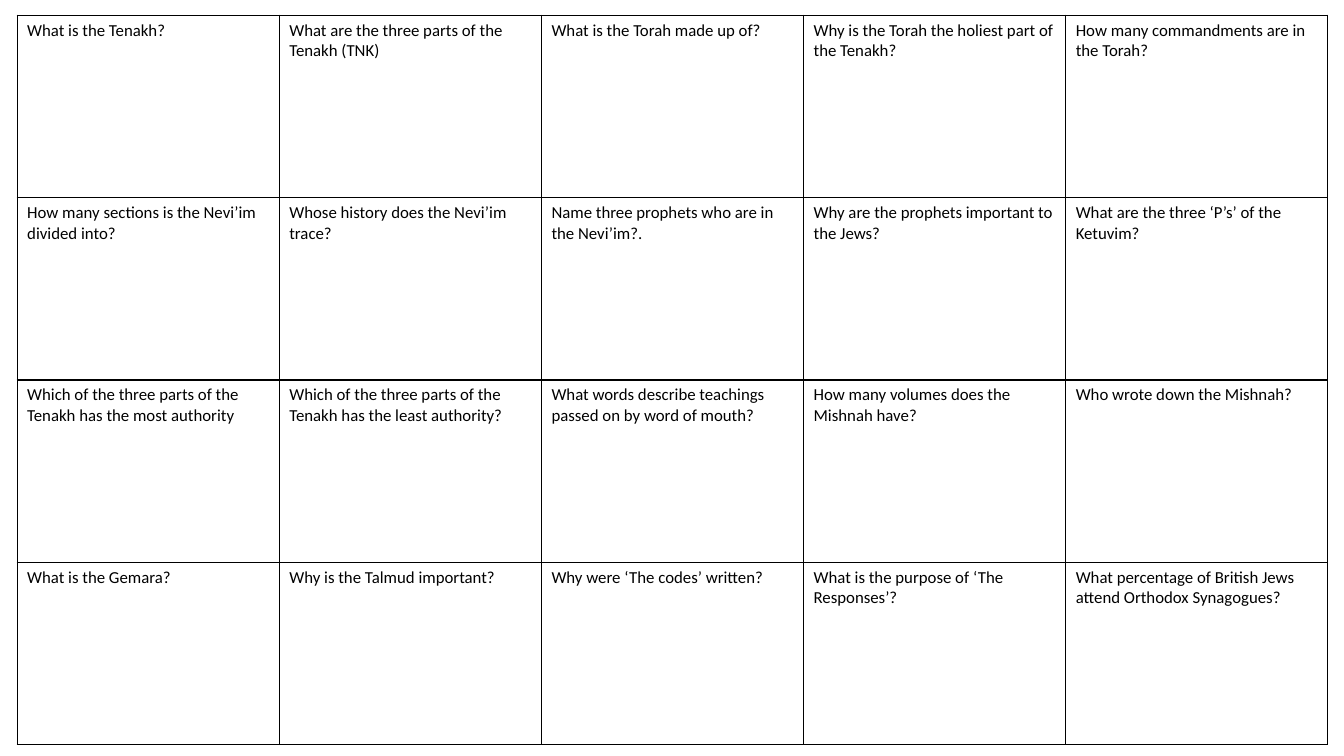
from lxml.etree import SubElement
from pptx import Presentation
from pptx.dml.color import RGBColor as RGB
from pptx.oxml.ns import qn
from pptx.util import Inches as In, Pt

ROWS = [
    ["What is the Tenakh?",
     "What are the three parts of the Tenakh (TNK)",
     "What is the Torah made up of?",
     "Why is the Torah the holiest part of the Tenakh?",
     "How many commandments are in the Torah?"],
    ["How many sections is the Nevi’im divided into?",
     "Whose history does the Nevi’im trace?",
     "Name three prophets who are in the Nevi’im?.",
     "Why are the prophets important to the Jews?",
     "What are the three ‘P’s’ of the Ketuvim?"],
    ["Which of the three parts of the Tenakh has the most authority",
     "Which of the three parts of the Tenakh has the least authority?",
     "What words describe teachings passed on by word of mouth?",
     "How many volumes does the Mishnah have?",
     "Who wrote down the Mishnah?"],
    ["What is the Gemara?",
     "Why is the Talmud important?",
     "Why were ‘The codes’ written?",
     "What is the purpose of ‘The Responses’?",
     "What percentage of British Jews attend Orthodox Synagogues?"],
]
INK = "000000"


def paint(font, tint):
    font.color.rgb = RGB.from_string(tint)


def edge(cell, tint, width):
    props = cell._tc.get_or_add_tcPr()
    for spot, side in enumerate(("lnL", "lnR", "lnT", "lnB")):
        line = SubElement(props, qn("a:" + side), w=str(Pt(width)))
        fill = SubElement(line, qn("a:solidFill"))
        SubElement(fill, qn("a:srgbClr"), val=tint)
        props.insert(spot, line)


deck = Presentation()
deck.slide_width, deck.slide_height = In(13.33), In(7.5)
slide = deck.slides.add_slide(deck.slide_layouts[6])

wide, high = 2.6, 1.81
down, across = len(ROWS), len(ROWS[0])
frame = slide.shapes.add_table(down, across, In(0.17), In(0.15),
                               In(wide * across), In(high * down))
grid = frame.table
grid.first_row = grid.horz_banding = False
for col in grid.columns:
    col.width = In(wide)
for row in grid.rows:
    row.height = In(high)

for r, asks in enumerate(ROWS):
    for c, ask in enumerate(asks):
        cell = grid.cell(r, c)
        cell.fill.background()
        edge(cell, INK, 1)
        run = cell.text_frame.paragraphs[0].add_run()
        run.text = ask
        run.font.name, run.font.size = "Calibri", Pt(12)
        paint(run.font, INK)

deck.save("out.pptx")
